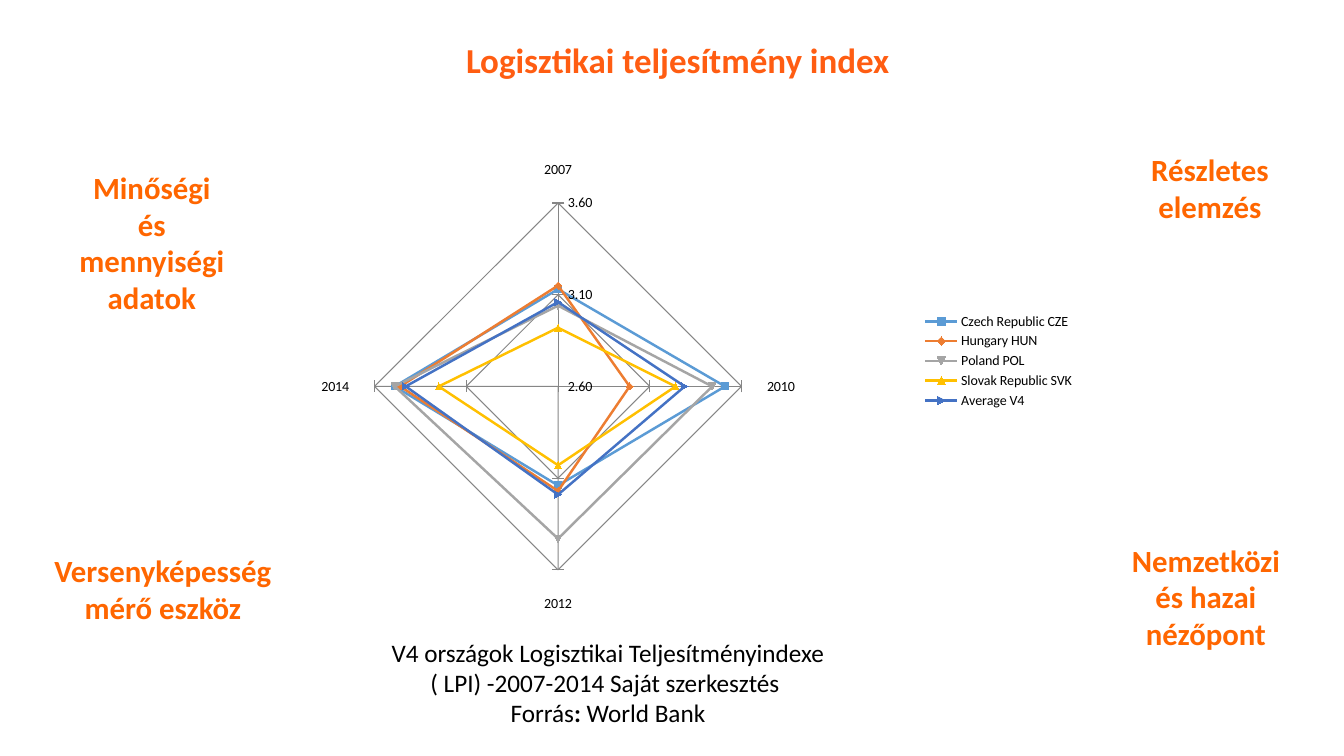
from pptx import Presentation
from pptx.chart.data import CategoryChartData
from pptx.dml.color import RGBColor
from pptx.enum.chart import XL_CHART_TYPE, XL_LEGEND_POSITION, XL_TICK_MARK
from pptx.enum.text import MSO_ANCHOR, MSO_AUTO_SIZE, PP_ALIGN
from pptx.oxml import parse_xml
from pptx.oxml.ns import nsdecls
from pptx.util import Inches, Pt

COLORS = {
    "text": "000000", "accent": "FF6600", "grid": "868686",
    "title_light": "FFAC8E", "title_mid": "FF5D12", "title_dark": "D45600",
    "czech": "5B9BD5", "hungary": "ED7D31", "poland": "A5A5A5",
    "slovakia": "FFC000", "average": "4472C4",
}
TITLE_STOPS = [(0, "title_light"), (75, "title_mid"), (100, "title_dark")]

YEARS = ["2007", "2010", "2012", "2014"]
SCORES = [
    ("Czech Republic CZE", "czech", (3.13, 3.51, 3.14, 3.49)),
    ("Hungary HUN", "hungary", (3.15, 2.99, 3.17, 3.46)),
    ("Poland POL", "poland", (3.04, 3.44, 3.43, 3.49)),
    ("Slovak Republic SVK", "slovakia", (2.92, 3.24, 3.03, 3.25)),
    ("Average V4", "average", (3.06, 3.29, 3.19, 3.43)),
]
PLOT_AREA = {"x": 0.106, "y": 0.193, "w": 0.462, "h": 0.709}

KEYWORDS = [
    ((0.65, 1.62, 1.71, 1.88), ["Minőségi", "és mennyiségi adatok"]),
    ((0.35, 5.42, 2.53, 0.84), ["Versenyképesség mérő eszköz"]),
    ((10.94, 1.45, 2.12, 0.84), ["Részletes elemzés"]),
    ((11.05, 5.32, 1.82, 1.21), ["Nemzetközi és hazai nézőpont"]),
]


def rgb(name):
    return RGBColor.from_string(COLORS[name])


class SlideBuilder:
    font_name = "Calibri"

    def __init__(self, slide):
        self.slide = slide

    def style(self, font, size, color=None, bold=False):
        font.name, font.size, font.bold = self.font_name, Pt(size), bold
        if color:
            font.color.rgb = rgb(color)

    def run(self, paragraph, text, size, color=None, bold=False):
        run = paragraph.add_run()
        run.text = text
        self.style(run.font, size, color, bold)
        return run

    def title(self, box, text, size):
        """Fill the title placeholder with text in a vertical gradient."""
        title = self.slide.shapes.title
        title.left, title.top, title.width, title.height = map(Inches, box)
        frame = title.text_frame
        frame.word_wrap = True
        frame.vertical_anchor = MSO_ANCHOR.TOP
        frame.auto_size = MSO_AUTO_SIZE.SHAPE_TO_FIT_TEXT
        heading = frame.paragraphs[0]
        heading.alignment = PP_ALIGN.CENTER
        run = self.run(heading, text, size, bold=True)
        stops = "".join(
            f'<a:gs pos="{percent * 1000}"><a:srgbClr val="{COLORS[color]}"/></a:gs>'
            for percent, color in TITLE_STOPS)
        run.font._element.insert(0, parse_xml(
            f'<a:gradFill {nsdecls("a")}><a:gsLst>{stops}</a:gsLst>'
            '<a:lin ang="5400000" scaled="0"/></a:gradFill>'))

    def text(self, box, count=1):
        """Add a text box and return its centred paragraphs."""
        frame = self.slide.shapes.add_textbox(*map(Inches, box)).text_frame
        frame.word_wrap = True
        frame.auto_size = MSO_AUTO_SIZE.SHAPE_TO_FIT_TEXT
        for _ in range(count - 1):
            frame.add_paragraph()
        for paragraph in frame.paragraphs:
            paragraph.alignment = PP_ALIGN.CENTER
        return frame.paragraphs

    def keyword(self, box, lines):
        for paragraph, line in zip(self.text(box, len(lines)), lines):
            self.run(paragraph, line, 22, "accent", True)

    def radar(self, box):
        data = CategoryChartData(number_format="0.00")
        data.categories = YEARS
        for country, _, values in SCORES:
            data.add_series(country, values)
        chart = self.slide.shapes.add_chart(
            XL_CHART_TYPE.RADAR_MARKERS, *map(Inches, box), data).chart
        chart.has_title = False
        self.style(chart.font, 10, "text")
        chart.has_legend = True
        chart.legend.position = XL_LEGEND_POSITION.RIGHT
        chart.legend.include_in_layout = False

        for series, (_, color, _) in zip(chart.plots[0].series, SCORES):
            series.smooth = False
            series.format.line.color.rgb = rgb(color)
            series.format.line.width = Pt(1.75)
            series.marker.format.fill.solid()
            series.marker.format.fill.fore_color.rgb = rgb(color)
            series.marker.format.line.color.rgb = rgb(color)

        scores = chart.value_axis
        scores.minimum_scale, scores.maximum_scale = 2.6, 3.6
        scores.major_unit = 0.5
        scores.major_tick_mark = XL_TICK_MARK.CROSS
        scores.tick_labels.number_format = "0.00"
        scores.tick_labels.number_format_is_linked = False
        for axis in (chart.category_axis, scores):
            axis.has_major_gridlines = True
            for line in (axis.format.line, axis.major_gridlines.format.line):
                line.color.rgb = rgb("grid")
                line.width = Pt(0.75)
        self.place_plot(chart)

    def place_plot(self, chart):
        """Fix the inner plot area by fractions of the chart."""
        plot_area = chart._chartSpace.chart.plotArea
        for layout in plot_area.xpath("c:layout"):
            plot_area.remove(layout)
        modes = "".join(f'<c:{side}Mode val="edge"/>' for side in "xy")
        sizes = "".join(f'<c:{key} val="{part}"/>' for key, part in PLOT_AREA.items())
        plot_area.insert(0, parse_xml(
            f'<c:layout {nsdecls("c")}><c:manualLayout>'
            f'<c:layoutTarget val="inner"/>{modes}{sizes}'
            '</c:manualLayout></c:layout>'))

    def caption(self, box):
        caption = self.text(box)[0]
        self.run(caption, "V4 országok Logisztikai Teljesítményindexe "
                 "( LPI) -2007-2014 Saját szerkesztés ", 18, "text")
        caption.add_line_break()
        self.run(caption, "Forrás", 18, "text")
        self.run(caption, ": ", 18, "text", True)
        self.run(caption, "World Bank", 18, "text")


def main():
    deck = Presentation()
    deck.slide_width, deck.slide_height = Inches(13.33), Inches(7.5)
    builder = SlideBuilder(deck.slides.add_slide(deck.slide_layouts[5]))
    builder.radar((2.88, 0.9, 7.88, 5.36))
    builder.title((2.3, 0.33, 8.92, 0.82), "Logisztikai teljesítmény index ", 25)
    for box, lines in KEYWORDS:
        builder.keyword(box, lines)
    builder.caption((3.56, 6.27, 4.94, 1.31))
    deck.save("out.pptx")


if __name__ == "__main__":
    main()
